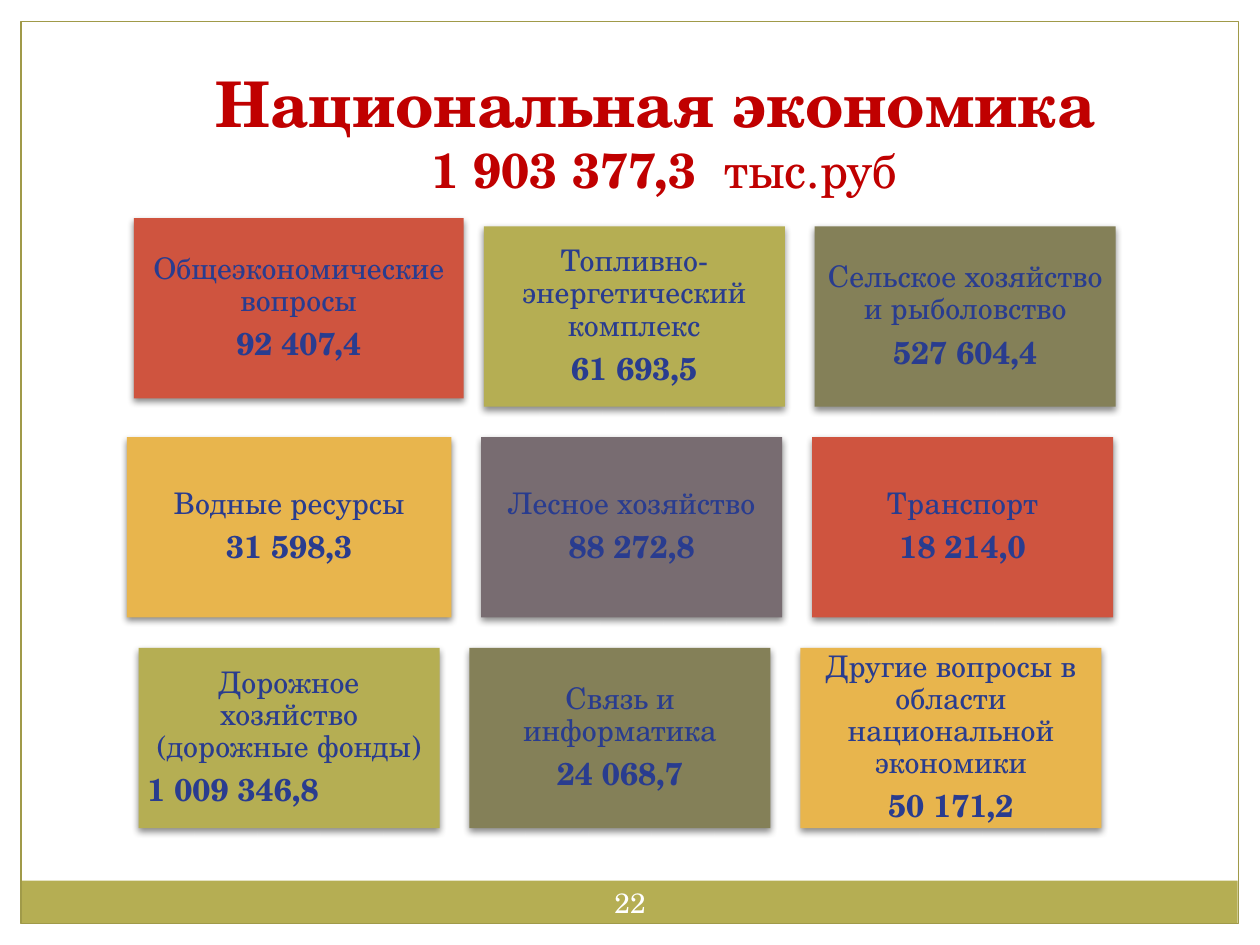
from lxml import etree
from pptx import Presentation
from pptx.dml.color import RGBColor
from pptx.enum.shapes import MSO_SHAPE
from pptx.enum.text import MSO_ANCHOR, MSO_AUTO_SIZE, PP_ALIGN
from pptx.oxml import parse_xml
from pptx.util import Pt

THEME = {
    "font": "TeX Gyre Schola",
    "title": "C00000", "ink": "293C8F", "page": "FFFFFF", "frame": "A09A49",
    "red": "CF543F", "olive": "B5AE53", "moss": "848058",
    "amber": "E8B54D", "plum": "786C71",
    "title_size": 36, "total_size": 28, "name_size": 17, "amount_size": 18,
    "number_size": 16,
}

HEADING = "Национальная экономика "
TOTAL, UNIT = "1 903 377,3  ", "тыс.руб"
PAGE_NUMBER = "22"
SECTORS = [
    [("Общеэкономические вопросы", "92 407,4", "red"),
     ("Топливно-энергетический комплекс", "61 693,5", "olive"),
     ("Сельское хозяйство и рыболовство", "527 604,4", "moss")],
    [("Водные ресурсы", "31 598,3", "amber"),
     ("Лесное хозяйство", "88 272,8", "plum"),
     ("Транспорт", "18 214,0", "red")],
    [("Дорожное хозяйство (дорожные фонды)", "1 009 346,8", "olive"),
     ("Связь и информатика", "24 068,7", "moss"),
     ("Другие вопросы в области национальной экономики", "50 171,2", "amber")],
]
LEFT_ALIGNED = {"1 009 346,8"}

CARD_WIDTH, CARD_HEIGHT = 172, 103
COLUMN_PITCH, ROW_PITCH, FIRST_TOP = 189.1, 120.4, 129.4
MIDDLE_LEFTS = [276.5, 275, 268.3]
SPECIAL_CARDS = {(0, 0): (76.5, 124.7, 188.5), (1, 0): (72.5, 249.8, 185.5)}

SHADOW = (
    '<a:effectLst xmlns:a="http://schemas.openxmlformats.org/drawingml/2006/main">'
    '<a:outerShdw blurRad="50800" dist="25400" dir="5400000" rotWithShape="0">'
    '<a:srgbClr val="000000"><a:alpha val="45000"/></a:srgbClr>'
    '</a:outerShdw></a:effectLst>'
)


def colour(key):
    return RGBColor.from_string(THEME[key])


def write(paragraph, text, size, ink, bold=False, align=PP_ALIGN.CENTER,
          spacing=None, after=None):
    run = paragraph.add_run()
    run.text = text
    run.font.name = THEME["font"]
    run.font.size = Pt(THEME[size])
    run.font.bold = bold
    run.font.color.rgb = colour(ink)
    paragraph.alignment = align
    if spacing is not None:
        paragraph.line_spacing = spacing
    if after is not None:
        paragraph.space_after = Pt(after)


def set_frame(frame, anchor, side, vertical):
    frame.word_wrap = True
    frame.auto_size = MSO_AUTO_SIZE.NONE
    frame.vertical_anchor = anchor
    frame.margin_left = frame.margin_right = Pt(side)
    frame.margin_top = frame.margin_bottom = Pt(vertical)


def add_box(slide, bounds, fill=None, line=None):
    box = slide.shapes.add_shape(MSO_SHAPE.RECTANGLE, *map(Pt, bounds))
    box.shadow.inherit = False
    if fill:
        box.fill.solid()
        box.fill.fore_color.rgb = colour(fill)
    else:
        box.fill.background()
    if line:
        box.line.color.rgb = colour(line)
        box.line.width = Pt(0.75)
    else:
        box.line.fill.background()
    return box


def add_heading(slide):
    title = slide.shapes.title
    title.left, title.top, title.width, title.height = map(Pt, (39.6, 33.1, 680.4, 118))
    frame = title.text_frame
    set_frame(frame, MSO_ANCHOR.TOP, 7.2, 3.6)
    write(frame.paragraphs[0], HEADING, "title_size", "title", bold=True)
    total = frame.add_paragraph()
    write(total, TOTAL, "total_size", "title", bold=True)
    write(total, UNIT, "total_size", "title")


def card_bounds(row, column):
    left = MIDDLE_LEFTS[row] + (column - 1) * COLUMN_PITCH
    top = FIRST_TOP + row * ROW_PITCH
    left, top, width = SPECIAL_CARDS.get((row, column), (left, top, CARD_WIDTH))
    return left, top, width, CARD_HEIGHT


def add_card(slide, bounds, name, amount, fill):
    card = add_box(slide, bounds, fill=fill)
    properties = card.fill._xPr
    properties.replace(properties.find("{*}effectLst"), parse_xml(SHADOW))
    frame = card.text_frame
    set_frame(frame, MSO_ANCHOR.MIDDLE, 5, 5)
    write(frame.paragraphs[0], name, "name_size", "ink", spacing=0.9, after=6)
    align = PP_ALIGN.LEFT if amount in LEFT_ALIGNED else PP_ALIGN.CENTER
    write(frame.add_paragraph(), amount, "amount_size", "ink", bold=True,
          align=align, spacing=0.9)


def add_page_number(slide):
    number = slide.shapes.add_textbox(*map(Pt, (336, 498.5, 48, 34.5)))
    set_frame(number.text_frame, MSO_ANCHOR.MIDDLE, 3.6, 3.6)
    write(number.text_frame.paragraphs[0], PAGE_NUMBER, "number_size", "page")


def main():
    deck = Presentation()
    deck.slide_width, deck.slide_height = Pt(720), Pt(540)
    slide = deck.slides.add_slide(deck.slide_layouts[5])
    add_box(slide, (11.75, 503.3, 695.5, 24.5), fill="olive")
    add_box(slide, (12, 12.2, 695.8, 515.6), line="frame")
    add_heading(slide)
    for row, sectors in enumerate(SECTORS):
        for column, sector in enumerate(sectors):
            add_card(slide, card_bounds(row, column), *sector)
    add_page_number(slide)
    deck.save("out.pptx")


if __name__ == "__main__":
    main()
